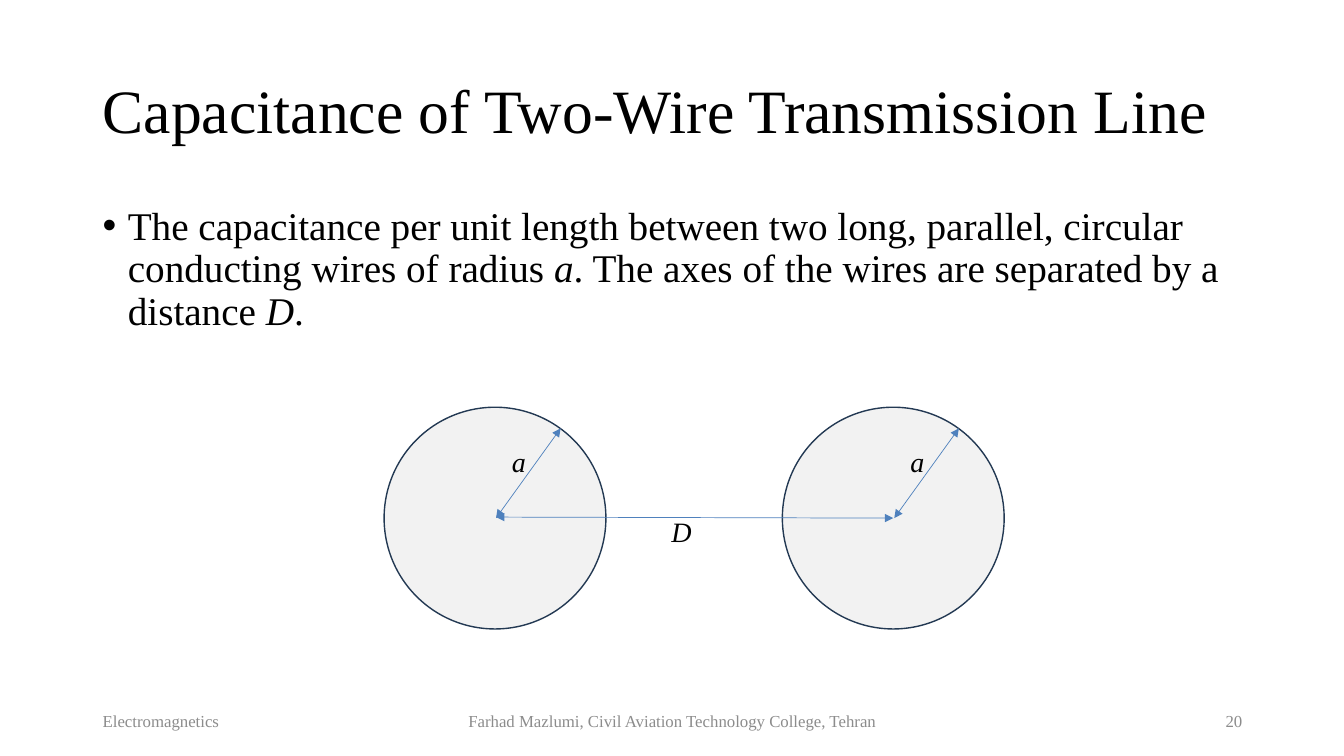
"""Builds the slide on the capacitance of a two-wire transmission line."""
from dataclasses import dataclass

from lxml import etree
from pptx import Presentation, util as u
from pptx.dml.color import RGBColor
from pptx.enum import shapes, text
from pptx.oxml.ns import qn

PX = 9144
FONT = "Times New Roman"
COLOURS = {"ink": "000000", "muted": "8C8C8C", "wire": "F2F2F2", "rim": "233953", "arrow": "4F81BD"}
LEFT, CENTER, RIGHT = text.PP_ALIGN.LEFT, text.PP_ALIGN.CENTER, text.PP_ALIGN.RIGHT
DIAMETER, SEPARATION = 220, 395


@dataclass(frozen=True)
class Box:
    left: int
    top: int
    width: int
    height: int

    def emu(self) -> list[int]:
        return [side * PX for side in (self.left, self.top, self.width, self.height)]


@dataclass(frozen=True)
class FooterPart:
    words: str
    box: Box
    align: text.PP_ALIGN


@dataclass(frozen=True)
class Dimension:
    symbol: str
    label: Box
    start: tuple[int, int]
    end: tuple[int, int]


FOOTER = [
    FooterPart("Electromagnetics", Box(92, 695, 300, 40), LEFT),
    FooterPart("Farhad Mazlumi, Civil Aviation Technology College, Tehran", Box(442, 695, 450, 40), CENTER),
    FooterPart("20", Box(942, 695, 300, 40), RIGHT),
]
STATEMENT = [
    ("The capacitance per unit length between two long, parallel, circular conducting wires of radius ", False),
    ("a", True),
    (". The axes of the wires are separated by a distance ", False),
    ("D", True),
    (".", False),
]
WIRES = [Box(381 + SEPARATION * i, 404, DIAMETER, DIAMETER) for i in range(2)]
RADII = [
    Dimension("a", Box(498 + SEPARATION * i, 436, 44, 44), (556 + SEPARATION * i, 425), (492 + SEPARATION * i, 514))
    for i in range(2)
]
DISTANCE = Dimension("D", Box(656, 506, 44, 44), (886, 514), (492, 513))


def rgb(name: str) -> RGBColor:
    return RGBColor.from_string(COLOURS[name])


def write(shape, runs, box: Box, *, size: int, colour="ink", align=LEFT,
          anchor=text.MSO_ANCHOR.TOP, spacing=1.0, before=0, bullet=False) -> None:
    shape.left, shape.top, shape.width, shape.height = box.emu()
    frame = shape.text_frame
    frame.word_wrap, frame.auto_size = True, text.MSO_AUTO_SIZE.NONE
    frame.vertical_anchor = anchor
    paragraph = frame.paragraphs[0]
    paragraph.alignment, paragraph.line_spacing = align, spacing
    paragraph.space_before = u.Pt(before)
    for words, italic in runs:
        run = paragraph.add_run()
        run.text = words
        run.font.name, run.font.size, run.font.italic = FONT, u.Pt(size), italic
        run.font.color.rgb = rgb(colour)
    if bullet:
        properties = paragraph._p.get_or_add_pPr()
        properties.set("marL", str(25 * PX))
        properties.set("indent", str(-25 * PX))
        etree.SubElement(properties, qn("a:buFont"), typeface="Arial")
        etree.SubElement(properties, qn("a:buChar"), char="•")


def draw_wire(slide, box: Box) -> None:
    wire = slide.shapes.add_shape(shapes.MSO_SHAPE.OVAL, *box.emu())
    wire.shadow.inherit = False
    wire.fill.solid()
    wire.fill.fore_color.rgb = rgb("wire")
    wire.line.color.rgb = rgb("rim")
    wire.line.width = u.Pt(1)


def draw_dimension(slide, dimension: Dimension) -> None:
    ends = [coordinate * PX for coordinate in dimension.start + dimension.end]
    arrow = slide.shapes.add_connector(shapes.MSO_CONNECTOR.STRAIGHT, *ends)
    arrow.line.color.rgb = rgb("arrow")
    arrow.line.width = u.Pt(0.5)
    for tip in ("a:headEnd", "a:tailEnd"):
        etree.SubElement(arrow.line._get_or_add_ln(), qn(tip), type="triangle")
    etree.SubElement(arrow._element.spPr, qn("a:effectLst"))
    label = slide.shapes.add_textbox(*dimension.label.emu())
    write(label, [(dimension.symbol, True)], dimension.label, size=20)


def main() -> None:
    deck = Presentation()
    deck.slide_width, deck.slide_height = u.Inches(13.33), u.Inches(7.5)
    slide = deck.slides.add_slide(deck.slide_layouts.get_by_name("Title Only"))
    middle = text.MSO_ANCHOR.MIDDLE
    write(slide.shapes.title, [("Capacitance of Two-Wire Transmission Line", False)],
          Box(92, 40, 1150, 145), size=44, anchor=middle, spacing=0.9)
    statement_box = Box(92, 200, 1150, 160)
    write(slide.shapes.add_textbox(*statement_box.emu()), STATEMENT, statement_box,
          size=28, spacing=0.9, before=10, bullet=True)
    for part in FOOTER:
        write(slide.shapes.add_textbox(*part.box.emu()), [(part.words, False)], part.box,
              size=12, colour="muted", align=part.align, anchor=middle)
    for wire in WIRES:
        draw_wire(slide, wire)
    for dimension in [DISTANCE, *RADII]:
        draw_dimension(slide, dimension)
    deck.save("out.pptx")


if __name__ == "__main__":
    main()
